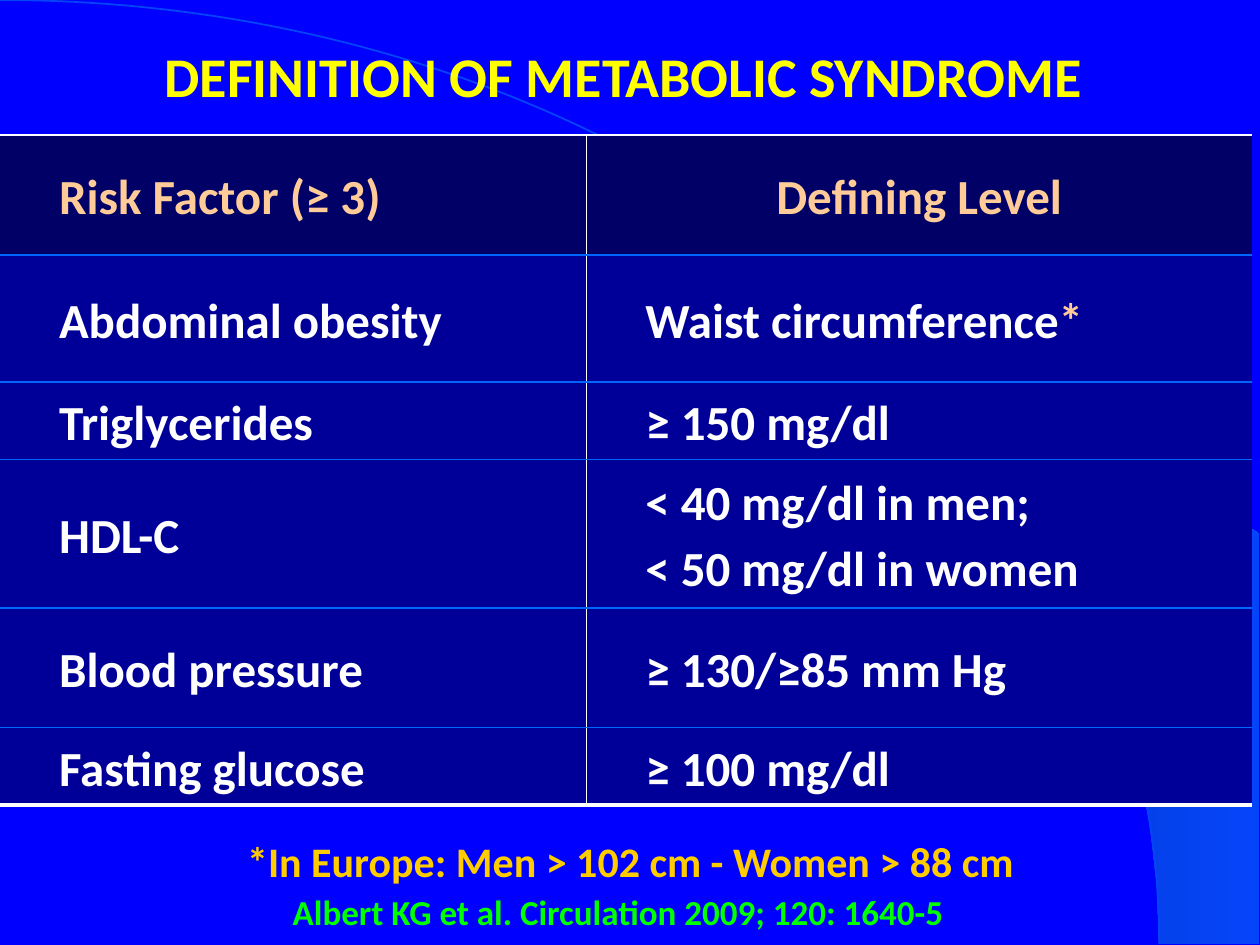
"""Build the slide that defines the metabolic syndrome."""
from dataclasses import dataclass
from math import cos, radians, sin

from lxml.etree import SubElement
from pptx import Presentation
from pptx.dml.color import RGBColor
from pptx.enum.text import MSO_ANCHOR as Anchor, MSO_AUTO_SIZE as AutoSize, PP_ALIGN as Align
from pptx.oxml.ns import qn
from pptx.util import Pt

WIDTH, HEIGHT = 720, 540
ARC_WIDTH, ARC_HEIGHT = 662.4, 539.3
WHITE, PEACH, BLUE = "FFFFFF", "FFCC99", "0066FF"
INDENT = 26.6
UNITS = 100


@dataclass
class Run:
    text: str
    size: float
    color: str


@dataclass
class Row:
    height: float
    factor: str
    level: str
    mark: str = ""


@dataclass
class Border:
    side: str
    color: str = ""
    width: float = 1


ROWS = [
    Row(68.4, "Risk Factor (≥ 3)", "Defining Level"),
    Row(72.7, "Abdominal obesity", "Waist circumference", "*"),
    Row(43.2, "Triglycerides", "≥ 150 mg/dl"),
    Row(85, "HDL-C", "< 40 mg/dl in men; \v< 50 mg/dl in women"),
    Row(68.4, "Blood pressure", "≥ 130/≥85 mm Hg"),
    Row(43.2, "Fasting glucose", "≥ 100 mg/dl"),
]


def rgb(color: str) -> RGBColor:
    """Turn a hex string into a colour."""
    return RGBColor.from_string(color)


def apply(target, **values) -> None:
    """Set every given attribute on the target."""
    for name, value in values.items():
        setattr(target, name, value)


def write(frame, runs: list[Run], **paragraph_format) -> None:
    """Write bold Calibri runs into the first paragraph of a text frame."""
    paragraph = frame.paragraphs[0]
    apply(paragraph, **paragraph_format)
    for item in runs:
        for index, line in enumerate(item.text.split("\v")):
            if index:
                paragraph.add_line_break()
            run = paragraph.add_run()
            run.text = line
            apply(run.font, name="Calibri", size=Pt(item.size), bold=True)
            run.font.color.rgb = rgb(item.color)


def arc(start: float, steps: int) -> list[tuple[float, float]]:
    """Return points on the quarter ellipse from a start angle to 90 degrees."""
    angles = [radians(start + (90 - start) * step / steps) for step in range(steps + 1)]
    return [(ARC_WIDTH * sin(a), ARC_HEIGHT * (1 - cos(a))) for a in angles]


def add_outline(slide, points: list[tuple[float, float]], close: bool):
    """Add a freeform through the points."""
    scaled = [(x * UNITS, y * UNITS) for x, y in points]
    builder = slide.shapes.build_freeform(*scaled[0], scale=Pt(1) / UNITS)
    builder.add_line_segments(scaled[1:], close=close)
    shape = builder.convert_to_shape()
    shape.shadow.inherit = False
    return shape


def bend(shape, controls: list[tuple[float, float]]) -> None:
    """Turn the single straight segment of a freeform into a cubic curve."""
    segment = next(shape.element.iter(qn("a:lnTo")))
    segment.tag = qn("a:cubicBezTo")
    for index, (x, y) in enumerate(controls):
        point = SubElement(segment, qn("a:pt"), x=str(round(x * UNITS)), y=str(round(y * UNITS)))
        segment.insert(index, point)


def add_backdrop(slide) -> None:
    """Draw the shaded corner and the arc over a blue background."""
    slide.background.fill.solid()
    slide.background.fill.fore_color.rgb = rgb("0000FF")
    right = 719.3
    corner = add_outline(slide, arc(39.8, 14) + [(right, ARC_HEIGHT), (right, 304.6)], True)
    corner.line.fill.background()
    corner.fill.gradient()
    corner.fill.gradient_angle = 0
    for stop, color, position in zip(corner.fill.gradient_stops, ("0431B2", "0545F9"), (0, 1)):
        stop.color.rgb = rgb(color)
        stop.position = position
    curve = add_outline(slide, [(0, 0), (ARC_WIDTH, ARC_HEIGHT)], False)
    bend(curve, [(365.8, 0), (ARC_WIDTH, 241.2)])
    curve.fill.background()
    curve.line.color.rgb = rgb("0545F9")
    curve.line.width = Pt(1)


def add_title(slide, run: Run) -> None:
    """Place the title in front of the backdrop."""
    title = slide.shapes.title
    apply(title, left=Pt(0), top=Pt(-2), width=Pt(WIDTH), height=Pt(90))
    apply(title.text_frame, vertical_anchor=Anchor.MIDDLE, word_wrap=True)
    write(title.text_frame, [run], alignment=Align.CENTER)
    slide.shapes.element.append(title.element)


def add_note(slide, box: tuple, run: Run, frame_format: dict, **paragraph_format) -> None:
    """Add a text box below the table."""
    frame = slide.shapes.add_textbox(*map(Pt, box)).text_frame
    apply(frame, **frame_format)
    write(frame, [run], **paragraph_format)


def set_borders(cell, borders: list[Border]) -> None:
    """Draw the cell borders; one without colour is hidden."""
    properties = cell._tc.get_or_add_tcPr()
    for border in borders:
        line = SubElement(properties, qn(f"a:ln{border.side}"), w=str(Pt(border.width)))
        if border.color:
            fill = SubElement(line, qn("a:solidFill"))
            SubElement(fill, qn("a:srgbClr"), val=border.color)
        else:
            SubElement(line, qn("a:noFill"))


def add_cell(cell, runs: list[Run], borders: list[Border], fill: str, centered: bool) -> None:
    """Fill, frame and write one table cell."""
    set_borders(cell, borders)
    cell.fill.solid()
    cell.fill.fore_color.rgb = rgb(fill)
    cell.vertical_anchor = Anchor.MIDDLE
    write(cell.text_frame, runs, line_spacing=1.1, alignment=Align.CENTER if centered else Align.LEFT)
    properties = cell.text_frame.paragraphs[0]._p.get_or_add_pPr()
    SubElement(SubElement(properties, qn("a:spcBef")), qn("a:spcPct"), val="50000")
    if not centered:
        properties.set("marL", str(Pt(INDENT)))
        properties.set("indent", "0")


def add_criteria(slide) -> None:
    """Add the table of risk factors and their defining levels."""
    height = sum(row.height for row in ROWS)
    table = slide.shapes.add_table(len(ROWS), 2, Pt(0), Pt(77.2), Pt(715.4), Pt(height)).table
    apply(table, first_row=False, horz_banding=False)
    for column, width in zip(table.columns, (335, 380.4)):
        column.width = Pt(width)
    last = len(ROWS) - 1
    for index, row in enumerate(ROWS):
        table.rows[index].height = Pt(row.height)
        header = index == 0
        color = PEACH if header else WHITE
        top = Border("T", WHITE if header else BLUE)
        bottom = Border("B", WHITE, 2.25) if index == last else Border("B", BLUE)
        levels = [Run(row.level, 28, color)]
        if row.mark:
            levels.append(Run(row.mark, 28, PEACH))
        for column, runs in enumerate(([Run(row.factor, 28, color)], levels)):
            sides = [Border("L", WHITE if column else ""), Border("R", "" if column else WHITE)]
            add_cell(table.cell(index, column), runs, sides + [top, bottom],
                     "000066" if header else "000099", header and column == 1)


def main() -> None:
    """Build and save the presentation."""
    presentation = Presentation()
    apply(presentation, slide_width=Pt(WIDTH), slide_height=Pt(HEIGHT))
    slide = presentation.slides.add_slide(presentation.slide_layouts[5])
    add_backdrop(slide)
    add_title(slide, Run("DEFINITION OF METABOLIC SYNDROME ", 32, "FFFF00"))
    add_note(slide, (167.3, 504.7, 386.6, 31.7),
             Run("Albert KG et al. Circulation 2009; 120: 1640-5", 20, "00FF00"),
             dict(word_wrap=False, auto_size=AutoSize.SHAPE_TO_FIT_TEXT,
                  vertical_anchor=Anchor.BOTTOM, margin_left=Pt(0)))
    add_criteria(slide)
    add_note(slide, (25.5, 470.9, 669.6, 37.4),
             Run("*In Europe: Men > 102 cm - Women > 88 cm", 24, "FFCC00"),
             dict(word_wrap=True, auto_size=AutoSize.SHAPE_TO_FIT_TEXT),
             alignment=Align.CENTER, line_spacing=1.1)
    presentation.save("out.pptx")


if __name__ == "__main__":
    main()
